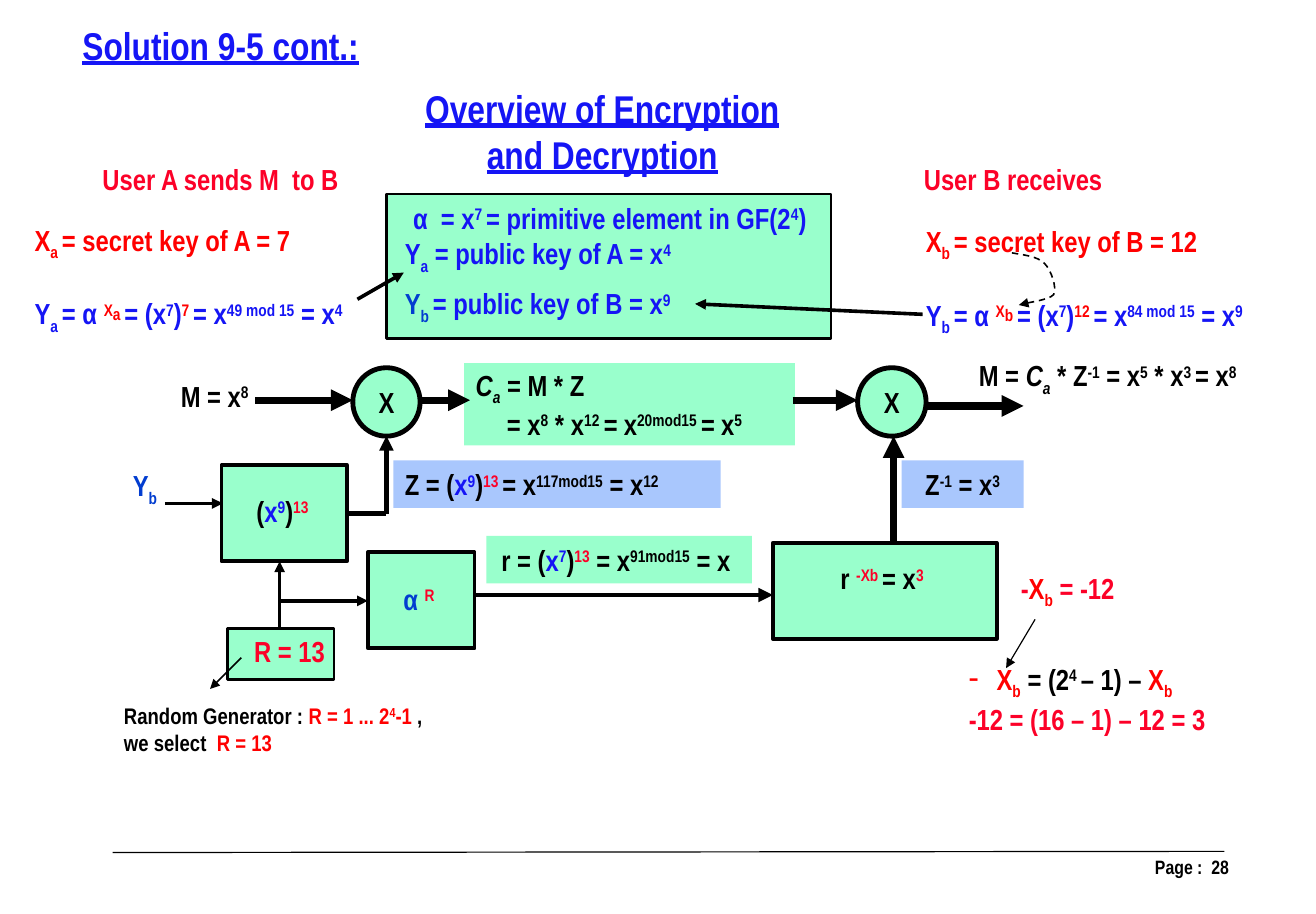
"""Build the slide on encryption and decryption of a message from user A to user B."""
from lxml.etree import SubElement
from pptx import Presentation
from pptx.dml.color import RGBColor
from pptx.enum.dml import MSO_LINE
from pptx.enum.shapes import MSO_CONNECTOR, MSO_SHAPE
from pptx.enum.text import MSO_ANCHOR, MSO_AUTO_SIZE, PP_ALIGN
from pptx.oxml.ns import qn
from pptx.util import Inches, Pt

U = Inches(0.1)
BLACK, BLUE, NAVY, RED, CRIMSON = "000000", "1515F5", "023DD0", "FF0000", "FC0128"
MINT, SKY = "99FFCC", "A9C7FD"
INKS = {"k": BLACK, "b": BLUE, "d": NAVY, "r": RED, "c": CRIMSON}
SHIFTS = {"^": "30000", "_": "-25000", "~": "16000"}
LEFT, CENTER, RIGHT = PP_ALIGN.LEFT, PP_ALIGN.CENTER, PP_ALIGN.RIGHT
TOP, MIDDLE = MSO_ANCHOR.TOP, MSO_ANCHOR.MIDDLE


def paint(fill, color):
    fill.solid()
    fill.fore_color.rgb = RGBColor.from_string(color)


def write(sp, text, size=18, color=BLACK, align=LEFT, anchor=MIDDLE,
          wrap=True, underline=None, gap=0, indent=0):
    tf = sp.text_frame
    tf.word_wrap, tf.vertical_anchor = wrap, anchor
    tf.auto_size = MSO_AUTO_SIZE.NONE
    for i, row in enumerate(text.split("\n")):
        p = tf.add_paragraph() if i else tf.paragraphs[0]
        p.alignment = align
        p.space_before = Pt(gap if i else 0)
        if i and indent:
            p._p.get_or_add_pPr().set("marL", str(int(indent * U)))
        for j, chunk in enumerate(row.split("<")):
            marked, _, plain = chunk.partition(">") if j else ("", "", chunk)
            marks, _, body = marked.partition("|")
            for flags, words in ((marks, body), ("", plain)):
                if not words:
                    continue
                r = p.add_run()
                r.text = words
                r.font.name, r.font.size, r.font.bold = "Arial Narrow", Pt(size), True
                r.font.underline = underline
                r.font.italic = True if "i" in flags else None
                inks = [INKS[f] for f in flags if f in INKS]
                paint(r.font.fill, inks[0] if inks else color)
                for f in flags:
                    if f in SHIFTS:
                        r._r.get_or_add_rPr().set("baseline", SHIFTS[f])


prs = Presentation()
prs.slide_width, prs.slide_height = Inches(11.34), Inches(7.88)
s = prs.slides.add_slide(prs.slide_layouts[5])

title = s.shapes.title
title.left, title.top, title.width, title.height = [int(v * U) for v in (6.1, 1.4, 26.1, 5)]
write(title, "Solution 9-5 cont.:", size=24, color=BLUE, anchor=TOP, wrap=False, underline=True)

RECT, OVAL = MSO_SHAPE.RECTANGLE, MSO_SHAPE.OVAL
panels = [
    (RECT, (33.3, 16.7, 38.3, 12.5), MINT, 1.5, "", {}),
    (RECT, (19.1, 40.1, 10.8, 8.3), MINT, 2.25, "", {}),
    (RECT, (66.6, 46.8, 19.3, 8.3), MINT, 2.25, "", {}),
    (RECT, (19.6, 54.2, 9.2, 4.4), MINT, 1.5, "", {}),
    (RECT, (31.7, 47.6, 9.2, 8.3), MINT, 2.25, "", {}),
    (OVAL, (30.4, 31.7, 5.8, 5.9), MINT, 3, "X", dict(align=CENTER, wrap=False)),
    (OVAL, (73.9, 31.7, 5.9, 5.9), MINT, 3, "X", dict(align=CENTER, wrap=False)),
    (RECT, (40, 31.3, 28.5, 7.1), MINT, 0,
     "<i|C><i_|a> = M * Z\n= x<^|8> * x<^|12 ><i|= >x<^|20mod15 ><i|= >x<^|5>", dict(indent=2.7)),
    (RECT, (41.9, 46.2, 22.9, 4.1), MINT, 0,
     "r = (<b|x><b^|7>)<c^|13> = x<^|91mod15> = x ", dict(align=CENTER)),
    (RECT, (33.9, 39.7, 28.2, 4.1), SKY, 0,
     "Z = (<b|x><b^|9>)<c^|13 >= x<^|117mod15> = x<^|12>", {}),
    (RECT, (77.7, 39.7, 10.5, 4.1), SKY, 0, "Z<^|-1> = x<^|3>", dict(align=CENTER)),
]
for kind, at, color, width, text, style in panels:
    sp = s.shapes.add_shape(kind, *[int(v * U) for v in at])
    sp.shadow.inherit = False
    paint(sp.fill, color)
    if width:
        paint(sp.line.fill, BLACK)
        sp.line.width = Pt(width)
    else:
        sp.line.fill.background()
    if text:
        write(sp, text, **style)

lines = [
    (9.7, 73.5, 105.5, 73.4, 0.75, False),
    (22, 34.5, 30.4, 34.5, 4.5, True),
    (36.2, 34.5, 40.5, 34.5, 4.5, True),
    (68.3, 34.5, 73.9, 34.5, 4.5, True),
    (79.8, 35, 88.2, 35, 4.5, True),
    (77, 46.8, 77, 37.6, 4.5, True),
    (29.9, 44.3, 33.3, 44.3, 3, False),
    (33.3, 44.3, 33.3, 37.6, 3, True),
    (14.2, 43.4, 19.2, 43.4, 2.25, True),
    (24.1, 54.3, 24.1, 48.4, 2.25, True),
    (24.1, 51.8, 31.7, 51.8, 2.25, True),
    (40.8, 51.3, 66.6, 51.3, 3, True),
    (79.5, 27.1, 59.9, 26.2, 2.25, True),
    (30.8, 25.8, 34.8, 23.5, 2.25, True),
    (89.2, 53.4, 86.7, 57.6, 0.75, True),
    (20.8, 56.7, 18.1, 59.4, 1, True),
]
arrows = []
for *ends, width, head in lines:
    c = s.shapes.add_connector(MSO_CONNECTOR.STRAIGHT, *[int(v * U) for v in ends])
    paint(c.line.fill, BLACK)
    c.line.width = Pt(width)
    SubElement(c._element.spPr, qn("a:effectLst"))
    if head:
        arrows.append(c)

bends = [((87.2, 21.8), (88.3, 22), (89.4, 22.1), (90, 22.7)),
         ((90, 22.7), (90.6, 23.3), (91.1, 24.8), (90.8, 25.4)),
         ((90.8, 25.4), (90.4, 25.9), (88.3, 26.1), (87.8, 26.3))]
curve = []
for bend in bends:
    for t in [step / 8 for step in range(1, 9)]:
        weights = ((1 - t) ** 3, 3 * t * (1 - t) ** 2, 3 * t * t * (1 - t), t ** 3)
        curve.append([int(U * sum(w * v for w, v in zip(weights, axis))) for axis in zip(*bend)])
pen = s.shapes.build_freeform(*[int(v * U) for v in bends[0][0]])
pen.add_line_segments(curve, close=False)
sp = pen.convert_to_shape()
sp.shadow.inherit = False
sp.fill.background()
paint(sp.line.fill, BLACK)
sp.line.width, sp.line.dash_style = Pt(1), MSO_LINE.DASH
arrows.append(sp)
for sp in arrows:
    SubElement(sp._element.spPr.find(qn("a:ln")), qn("a:tailEnd"), type="triangle")

labels = [
    ((33.7, 6.8, 36.4, 9.1), "Overview of Encryption and Decryption",
     dict(size=24, color=BLUE, align=CENTER, anchor=TOP, underline=True)),
    ((4.4, 13.4, 29.2, 4), "User A sends M  to B", dict(color=CRIMSON, align=CENTER, anchor=TOP)),
    ((72.7, 13.4, 29.2, 4), "User B receives", dict(color=CRIMSON, align=CENTER, anchor=TOP)),
    ((34.2, 16.7, 36.7, 4.1), "α  = x<^|7 >= primitive element in GF(2<^|4>)",
     dict(color=BLUE, align=CENTER, wrap=False)),
    ((33.9, 20, 38.7, 4.1), "Y<_|a> = public key of A = x<^|4>", dict(color=BLUE)),
    ((33.9, 24.3, 38.3, 4.1), "<d|Y><d_|b >= public key of B = x<^|9>", dict(color=BLUE)),
    ((14.6, 32.1, 8, 4.1), "M = x<^|8>", dict(wrap=False)),
    ((78.5, 30.5, 33.9, 4.1),
     "M = <i|C><i_|a> * Z<^|-1> = x<^|5> * x<^|3 >= x<^|8>", dict(align=CENTER)),
    ((8.3, 40, 8.4, 4.1), "Y<_|b>", dict(color=NAVY, align=CENTER)),
    ((16, 42, 16.7, 4.1), "(<b|x><b^|9>)<c^|13>", dict(align=CENTER)),
    ((31.1, 49.6, 10, 4.1), "<d|α ><c^|R>", dict(align=CENTER)),
    ((20.8, 54.1, 8.3, 4.1), "R = 13", dict(color=CRIMSON, align=CENTER)),
    ((63.9, 47.8, 24.2, 4.1), "r <c^|-Xb >= x<c^|3>", dict(align=CENTER)),
    ((85, 48.8, 14, 4.1), "-<r|X><r_|b> = -12", dict(color=CRIMSON, align=CENTER)),
    ((9.7, 60, 39.2, 5.7),
     "Random Generator : <r|R = 1 ... 2><r^|4><r|-1 >,\nwe select  <r|R = 13>", dict(size=14)),
    ((81.3, 73.2, 25.6, 3), "Page :  28", dict(size=12, align=RIGHT, anchor=TOP)),
]
for left, top, width, user, key, secret, power, result in (
        (2, 19, 30.8, "A", "a", 7, 49, 4), (78.8, 19.1, 33.9, "B", "b", 12, 84, 9)):
    text = (f"<r|X><r_|{key} ><r|= secret key of {user} = {secret}>\n"
            f"Y<_|{key} >= α <r^|X><r~|{key} >= (x<^|7>)<r^|{secret} >"
            f"= x<^|{power} mod 15> = x<^|{result}>")
    labels.append(((left, top, width, 10.1), text, dict(color=BLUE, gap=21)))
for at, text, style in labels:
    write(s.shapes.add_textbox(*[int(v * U) for v in at]), text, **style)

sp = s.shapes.add_textbox(*[int(v * U) for v in (82.5, 56.7, 28.6, 7.1)])
write(sp, "<r|X><r_|b> = (2<^|4 >– 1) – <r|X><r_|b>\n<c|-12 = (16 – 1) – 12 = 3>")
pPr = sp.text_frame.paragraphs[0]._p.get_or_add_pPr()
pPr.set("marL", str(int(2.4 * U)))
pPr.set("indent", str(int(-2.4 * U)))
SubElement(pPr, qn("a:buChar"), char="-")

prs.save("out.pptx")
